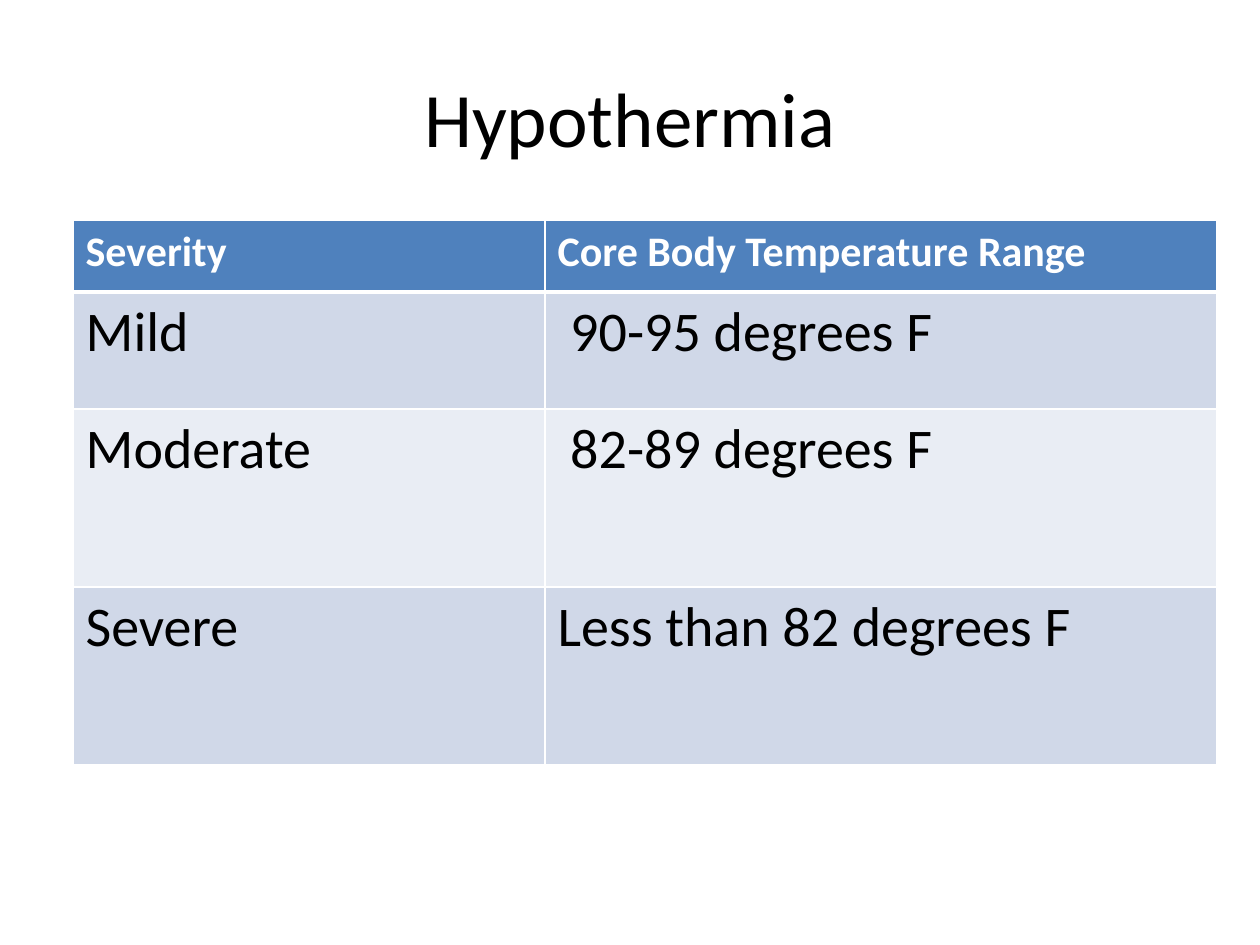
from pptx import Presentation
from pptx import util as u
from pptx.dml.color import RGBColor
from pptx.enum import text
from pptx.oxml.ns import qn
from lxml import etree

PX = 914400 // 126
FONT = "Calibri"
TITLE = "Hypothermia"
ROWS = [
    ("Severity", "Core Body Temperature Range"),
    ("Mild", " 90-95 degrees F"),
    ("Moderate", " 82-89 degrees F"),
    ("Severe", "Less than 82 degrees F"),
]
COLUMN_WIDTHS = [472, 672]
ROW_HEIGHTS = [72, 117, 178, 178]
HEADER_FILL = "4F81BD"
BAND_FILLS = ["E9EDF4", "D0D8E8"]


def px(*lengths):
    return [u.Emu(length * PX) for length in lengths]


def colour(value):
    return RGBColor.from_string(value)


def write(para, words, size, ink, bold=False):
    span = para.add_run()
    span.text = words
    span.font.name = FONT
    span.font.size = u.Pt(size)
    span.font.bold = bold
    span.font.color.rgb = colour(ink)


def add_borders(cell, widths):
    properties = cell._tc.get_or_add_tcPr()
    for position, (side, width) in enumerate(widths.items()):
        line = etree.Element(qn("a:" + side), w=str(u.Pt(width)))
        fill = etree.SubElement(line, qn("a:solidFill"))
        etree.SubElement(fill, qn("a:srgbClr"), val="FFFFFF")
        properties.insert(position, line)


def add_title(page):
    box = page.shapes.add_textbox(*px(63, 38, 1134, 158))
    frame = box.text_frame
    frame.word_wrap = True
    frame.vertical_anchor = text.MSO_ANCHOR.MIDDLE
    para = frame.paragraphs[0]
    para.alignment = text.PP_ALIGN.CENTER
    write(para, TITLE, 44, "000000")


def add_severity_table(page):
    place = px(73, 220, sum(COLUMN_WIDTHS), sum(ROW_HEIGHTS))
    table = page.shapes.add_table(len(ROWS), len(COLUMN_WIDTHS), *place).table
    for column, width in zip(table.columns, px(*COLUMN_WIDTHS)):
        column.width = width
    for row, height in zip(table.rows, px(*ROW_HEIGHTS)):
        row.height = height
    for r, row in enumerate(ROWS):
        header = r == 0
        for c, words in enumerate(row):
            cell = table.cell(r, c)
            cell.fill.solid()
            cell.fill.fore_color.rgb = colour(HEADER_FILL if header else BAND_FILLS[r % 2])
            add_borders(cell, {"lnL": 1, "lnR": 1, "lnT": 3 if r == 1 else 1, "lnB": 3 if header else 1})
            para = cell.text_frame.paragraphs[0]
            if header:
                write(para, words, 24, "FFFFFF", True)
            else:
                write(para, words, 32, "000000")


def main():
    deck = Presentation()
    deck.slide_width, deck.slide_height = px(1260, 945)
    page = deck.slides.add_slide(deck.slide_layouts[6])
    add_title(page)
    add_severity_table(page)
    deck.save("out.pptx")


if __name__ == "__main__":
    main()
